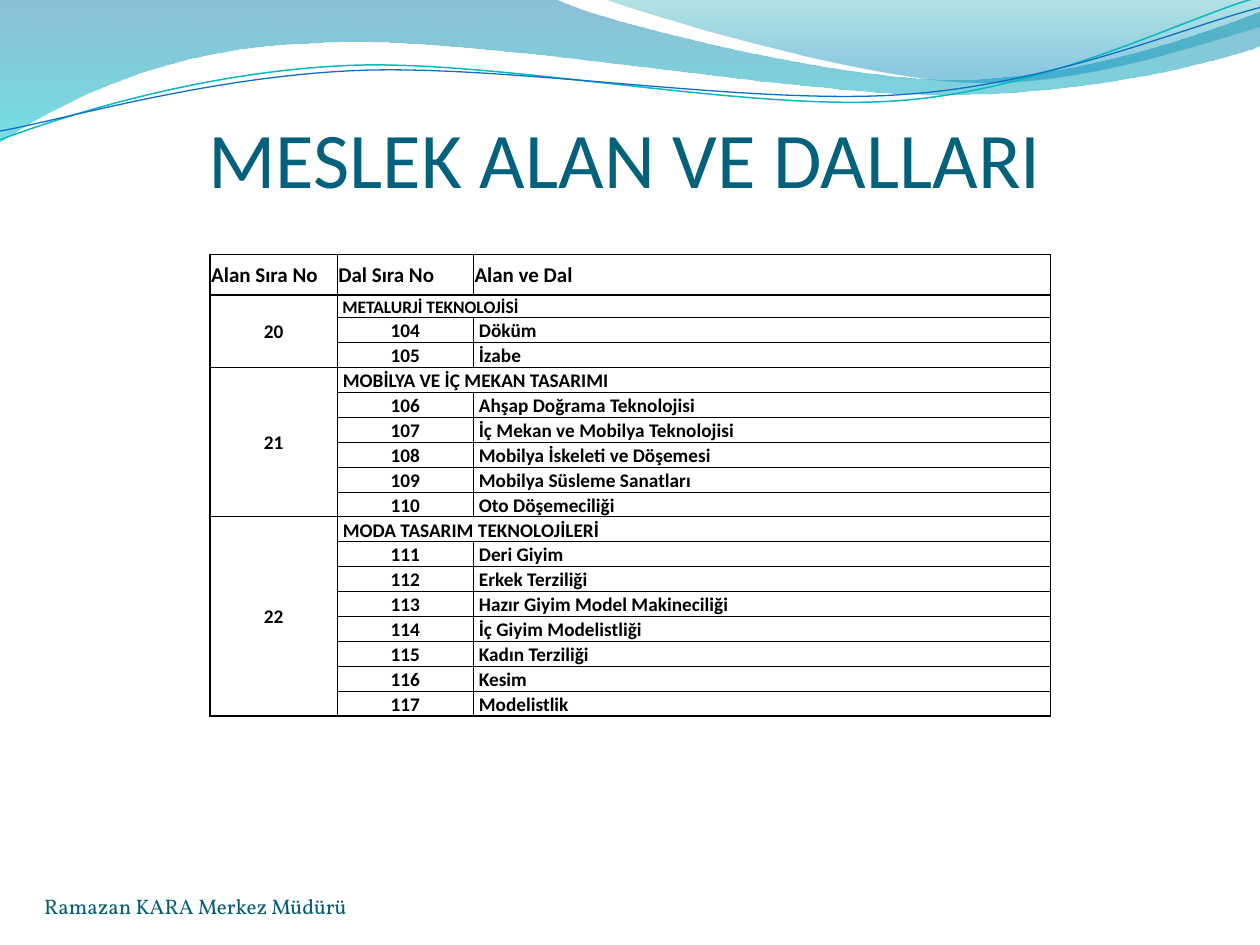
from lxml import etree
from pptx import Presentation
from pptx.dml.color import RGBColor
from pptx.enum import text
from pptx.oxml import parse_xml
from pptx.oxml.ns import nsdecls, qn
from pptx.util import Inches, Pt

MIDDLE, BOTTOM = text.MSO_ANCHOR.MIDDLE, text.MSO_ANCHOR.BOTTOM
CENTER, LEFT = text.PP_ALIGN.CENTER, text.PP_ALIGN.LEFT
THIN, THICK = 0.5, 1

# Each wave is a list of points; six numbers make a Bézier segment, two a line.
UPPER_BAND = [
    (0, 0), (4.4, -0.01), (4.76, 0.17, 6.64, 0.63, 7.58, 0.63),
    (8.53, 0.63, 9.58, 0.26, 10, 0.09), (10.01, 0.36),
    (9.83, 0.44, 8.7, 0.76, 7.46, 0.75), (6.22, 0.75, 3.82, 0.28, 2.57, 0.34),
    (1.29, 0.36, 0.46, 0.83, -0.01, 1.13), (0, 0)]
RIGHT_BAND = [
    (4.79, -0.01), (5.09, 0.11, 6.82, 0.62, 7.69, 0.65),
    (8.56, 0.69, 9.61, 0.32, 10, 0.21), (10, 0), (4.79, -0.01)]
TEAL_LINE = [
    (0, 1.11), (0.48, 0.93, 1.58, 0.57, 2.77, 0.52),
    (3.95, 0.47, 5.93, 0.89, 7.13, 0.8), (8.33, 0.71, 9.38, 0.15, 9.98, -0.02)]
BLUE_LINE = [
    (0, 1.04), (0.47, 0.96, 1.64, 0.61, 2.83, 0.56),
    (4.03, 0.51, 5.97, 0.84, 7.17, 0.75), (8.36, 0.67, 9.41, 0.21, 10, 0.06)]

HEADERS = ["Alan Sıra No", "Dal Sıra No", "Alan ve Dal"]
FIRST_FIELD, FIRST_BRANCH = 20, 104
FIELDS = [
    ("METALURJİ TEKNOLOJİSİ", 10, ["Döküm", "İzabe"]),
    ("MOBİLYA VE İÇ MEKAN TASARIMI", 11,
     ["Ahşap Doğrama Teknolojisi", "İç Mekan ve Mobilya Teknolojisi",
      "Mobilya İskeleti ve Döşemesi", "Mobilya Süsleme Sanatları",
      "Oto Döşemeciliği"]),
    ("MODA TASARIM TEKNOLOJİLERİ", 11,
     ["Deri Giyim", "Erkek Terziliği", "Hazır Giyim Model Makineciliği",
      "İç Giyim Modelistliği", "Kadın Terziliği", "Kesim", "Modelistlik"]),
]


def rgb(value):
    return RGBColor.from_string(value)


def set_all(obj, **values):
    for name, value in values.items():
        setattr(obj, name, value)


def write(tf, words, size, font, color, align=LEFT, bold=False):
    p = tf.paragraphs[0]
    p.alignment = align
    r = p.add_run()
    r.text = words
    set_all(r.font, size=Pt(size), name=font, bold=bold)
    r.font.color.rgb = rgb(color)


def add_wave(s, segments, closed):
    """Build the outline through all points, then bend each three lines into a curve."""
    points = [(Inches(x), Inches(y)) for seg in segments
              for x, y in zip(seg[::2], seg[1::2])]
    builder = s.shapes.build_freeform(*points[0])
    builder.add_line_segments(points[1:], close=closed)
    sp = builder.convert_to_shape()
    sp.shadow.inherit = False

    lines = iter(list(sp.element.iter(qn("a:lnTo"))))
    for seg in segments[1:]:
        line = next(lines)
        if len(seg) == 6:
            curve = etree.Element(qn("a:cubicBezTo"))
            line.addprevious(curve)
            for part in (line, next(lines), next(lines)):
                curve.append(part[0])
                part.getparent().remove(part)
    return sp


def add_band(s, segments, stops):
    """Add a closed wave; stops hold position, colour and opacity in percent."""
    sp = add_wave(s, segments, True)
    sp.line.fill.background()
    gs = "".join(
        f'<a:gs pos="{pos * 1000}"><a:srgbClr val="{color}">'
        f'<a:alpha val="{alpha * 1000}"/></a:srgbClr></a:gs>'
        for pos, color, alpha in stops)
    sp.element.spPr.find(qn("a:custGeom")).addnext(parse_xml(
        f'<a:gradFill {nsdecls("a")}><a:gsLst>{gs}</a:gsLst>'
        '<a:lin ang="5400000" scaled="0"/></a:gradFill>'))


def add_wave_line(s, segments, color, width):
    sp = add_wave(s, segments, False)
    sp.fill.background()
    sp.line.color.rgb = rgb(color)
    sp.line.width = Pt(width)


def add_title(s, words):
    sp = s.shapes.title
    set_all(sp, left=Inches(1.3), top=Inches(0.77), width=Inches(7.32), height=Inches(0.85))
    set_all(sp.text_frame, vertical_anchor=BOTTOM, margin_left=0, margin_right=0,
            margin_top=Inches(0.05), margin_bottom=0)
    write(sp.text_frame, words, 45, "Calibri", "04617B", CENTER)
    s.shapes.element.append(sp.element)  # in front of the waves


def add_footer(s, words):
    tf = s.shapes.add_textbox(Inches(0.35), Inches(6.9), Inches(3.67), Inches(0.39)).text_frame
    set_all(tf, word_wrap=True, vertical_anchor=BOTTOM, margin_left=0,
            margin_right=0, margin_top=0, margin_bottom=0)
    write(tf, words, 12, "Vollkorn", "045D75")


def fill_cell(cell, words, size=11, align=LEFT, anchor=BOTTOM):
    set_all(cell, vertical_anchor=anchor, margin_left=Inches(0.01),
            margin_right=Inches(0.01), margin_top=Pt(1), margin_bottom=0)
    write(cell.text_frame, words, size, "Calibri", "000000", align, True)


def set_borders(cell, **widths):
    tc_pr = cell._tc.get_or_add_tcPr()
    for side, width in widths.items():
        ln = etree.SubElement(tc_pr, qn(f"a:ln{side}"), w=str(Pt(width)))
        fill = etree.SubElement(ln, qn("a:solidFill"))
        etree.SubElement(fill, qn("a:srgbClr"), val="000000")


def rule_table(table):
    """Thick lines around the table and below the header, thin ones inside."""
    last_row, last_col = len(table.rows), len(table.columns)
    for row in range(last_row):
        for col in range(last_col):
            cell = table.cell(row, col)
            if not cell.is_spanned:
                bottom, right = row + cell.span_height, col + cell.span_width
                set_borders(cell,
                            L=THICK if col == 0 else THIN,
                            R=THICK if right == last_col else THIN,
                            T=THICK if row in (0, 1) else THIN,
                            B=THICK if bottom in (1, last_row) else THIN)
            elif col == 0:
                set_borders(cell, L=THICK)
            cell.fill.background()


def add_field_table(s):
    rows = 1 + sum(1 + len(branches) for _, _, branches in FIELDS)
    table = s.shapes.add_table(rows, 3, Pt(120), Inches(2.02),
                               Inches(6.67), Inches(3.58)).table
    set_all(table, first_row=False, horz_banding=False)
    for column, width in zip(table.columns, (1.01, 1.08, 4.58)):
        column.width = Inches(width)
    for i, row in enumerate(table.rows):
        row.height = Inches(0.18 if i else 0.32)

    for col, words in enumerate(HEADERS):
        fill_cell(table.cell(0, col), words, 12, anchor=MIDDLE)
    row, branch_no = 1, FIRST_BRANCH
    for field_no, (field, size, branches) in enumerate(FIELDS, FIRST_FIELD):
        number, name = table.cell(row, 0), table.cell(row, 1)
        number.merge(table.cell(row + len(branches), 0))
        name.merge(table.cell(row, 2))
        fill_cell(number, str(field_no), align=CENTER, anchor=MIDDLE)
        fill_cell(name, f" {field}", size)
        for row, branch in enumerate(branches, row + 1):
            fill_cell(table.cell(row, 1), str(branch_no), align=CENTER)
            fill_cell(table.cell(row, 2), f" {branch}")
            branch_no += 1
        row += 1
    rule_table(table)


def main():
    prs = Presentation()
    set_all(prs, slide_width=Inches(10), slide_height=Inches(7.5))
    s = prs.slides.add_slide(prs.slide_layouts[5])
    add_band(s, UPPER_BAND, [(0, "0074A1", 45), (100, "00C6CF", 55)])
    add_band(s, RIGHT_BAND, [(0, "00A1A9", 30), (80, "008BBF", 45)])
    add_wave_line(s, TEAL_LINE, "0AB8BF", 0.85)
    add_wave_line(s, BLUE_LINE, "0F6FC6", 0.75)
    add_title(s, "MESLEK ALAN VE DALLARI")
    add_footer(s, "Ramazan KARA Merkez Müdürü")
    add_field_table(s)
    prs.save("out.pptx")


if __name__ == "__main__":
    main()
